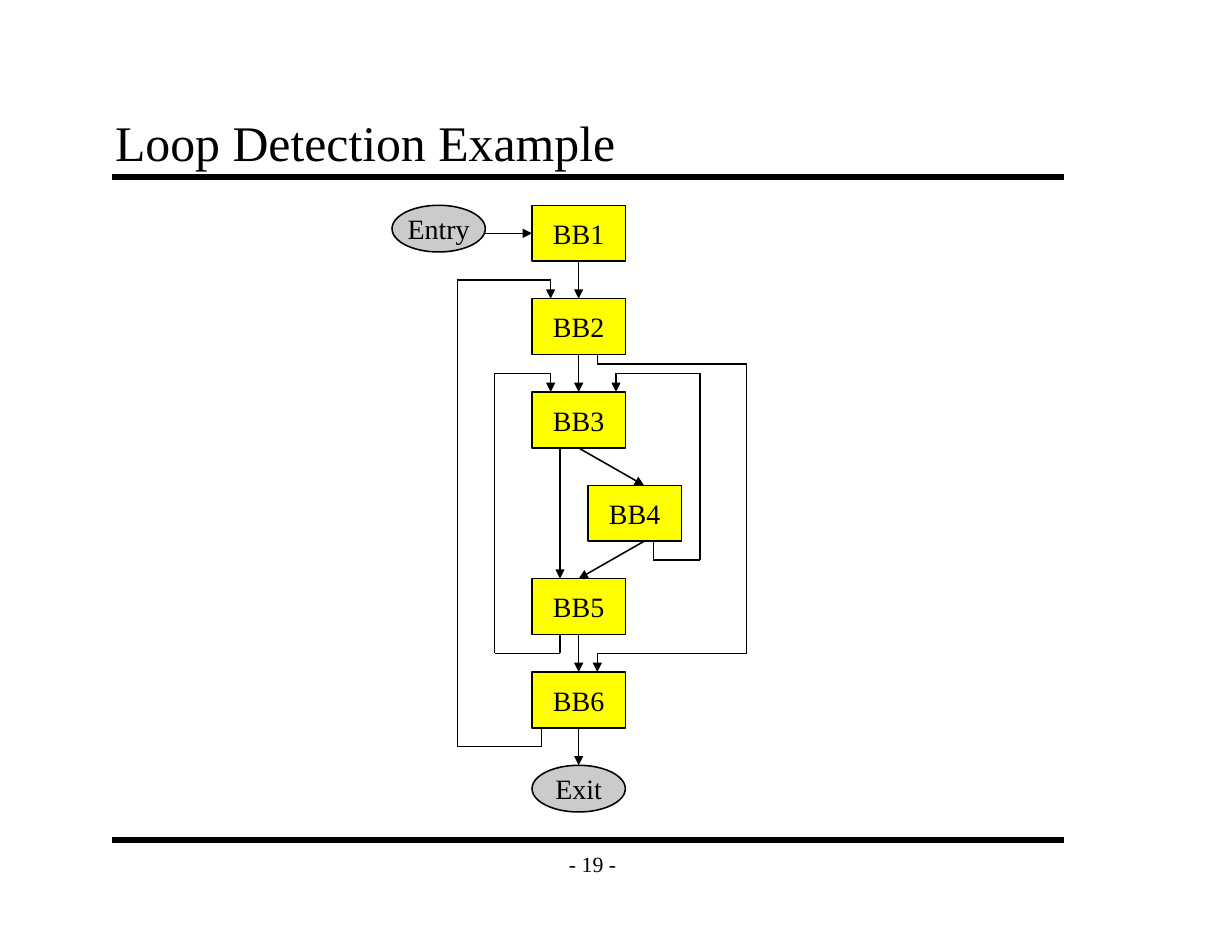
from itertools import pairwise

from lxml import etree
from pptx import Presentation
from pptx.dml.color import RGBColor
from pptx.enum import shapes, text
from pptx.oxml.ns import qn
from pptx.util import Pt

FONT = "Times New Roman"
BLACK, YELLOW, GRAY = "000000", "FFFF00", "CBCBCB"
TOP, BOTTOM, LEFT = 0, 2, 1  # connection sites
COLUMN, FIRST_ROW, PITCH = 342, 132, 60
BLOCK_WIDTH, BLOCK_HEIGHT, OVAL_HEIGHT = 60, 36, 30
MIDDLE = COLUMN + BLOCK_WIDTH / 2


def color(value):
    return RGBColor.from_string(value)


def write(box, content, *, size, align=text.PP_ALIGN.CENTER,
          anchor=text.MSO_ANCHOR.MIDDLE, wrap=False):
    frame = box.text_frame
    frame.word_wrap = wrap
    frame.vertical_anchor = anchor
    frame.margin_left = frame.margin_right = Pt(8)
    frame.margin_top = frame.margin_bottom = Pt(4)
    para = frame.paragraphs[0]
    para.alignment = align
    span = para.add_run()
    span.text = content
    span.font.name = FONT
    span.font.size = Pt(size)
    span.font.color.rgb = color(BLACK)


def add_label(page, content, left, top, width, height, **style):
    box = page.shapes.add_textbox(Pt(left), Pt(top), Pt(width), Pt(height))
    write(box, content, **style)


def add_node(page, content, left, top, height, kind, fill):
    box = page.shapes.add_shape(kind, Pt(left), Pt(top), Pt(BLOCK_WIDTH), Pt(height))
    box.shadow.inherit = False
    box.fill.solid()
    box.fill.fore_color.rgb = color(fill)
    box.line.color.rgb = color(BLACK)
    box.line.width = Pt(1)
    write(box, content, size=18)
    return box


def add_line(page, start, end, width=1, arrow=False):
    line = page.shapes.add_connector(
        shapes.MSO_CONNECTOR.STRAIGHT, *(Pt(value) for value in (*start, *end)))
    line.line.color.rgb = color(BLACK)
    line.line.width = Pt(width)
    if arrow:
        etree.SubElement(line.line._get_or_add_ln(), qn("a:tailEnd"),
                         type="triangle", w="med", len="med")
    etree.SubElement(line._element.spPr, qn("a:effectLst"))
    return line


def add_route(page, points):
    """Draw a bent path whose last segment carries the arrowhead."""
    for start, end in pairwise(points):
        add_line(page, start, end, arrow=end == points[-1])


def main():
    deck = Presentation()
    deck.slide_width, deck.slide_height = Pt(792), Pt(612)
    page = deck.slides.add_slide(deck.slide_layouts[6])

    # Title, rules and page number
    for y in (114, 540):
        add_line(page, (72, y), (684, y), width=4)
    add_label(page, "- 19 -", 354, 540, 54, 30, size=14)
    add_label(page, "Loop Detection Example", 66, 66, 612, 48, size=32,
              align=text.PP_ALIGN.LEFT, anchor=text.MSO_ANCHOR.BOTTOM, wrap=True)

    # Basic blocks, with BB4 set to the right
    tops = {n: FIRST_ROW + (n - 1) * PITCH for n in range(1, 7)}
    bottoms = {n: top + BLOCK_HEIGHT for n, top in tops.items()}
    blocks = {
        n: add_node(page, f"BB{n}", COLUMN + (36 if n == 4 else 0), top,
                    BLOCK_HEIGHT, shapes.MSO_SHAPE.RECTANGLE, YELLOW)
        for n, top in tops.items()
    }
    exit_top = FIRST_ROW + 6 * PITCH
    add_node(page, "Entry", 252, FIRST_ROW, OVAL_HEIGHT, shapes.MSO_SHAPE.OVAL, GRAY)
    exit_node = add_node(page, "Exit", COLUMN, exit_top, OVAL_HEIGHT,
                         shapes.MSO_SHAPE.OVAL, GRAY)

    # Straight flow down the column
    for upper, lower in ((blocks[1], blocks[2]), (blocks[2], blocks[3]),
                         (blocks[5], blocks[6]), (blocks[6], exit_node)):
        line = add_line(page, (MIDDLE, 0), (MIDDLE, 1), arrow=True)
        line.begin_connect(upper, BOTTOM)
        line.end_connect(lower, TOP)

    # Entry edge and the branch through BB4
    line = add_line(page, (312, 150), (COLUMN, 150), arrow=True)
    line.end_connect(blocks[1], LEFT)
    line = add_line(page, (MIDDLE, bottoms[3]), (414, tops[4]), arrow=True)
    line.begin_connect(blocks[3], BOTTOM)
    line = add_line(page, (414, bottoms[4]), (MIDDLE, tops[5]), arrow=True)
    line.end_connect(blocks[5], TOP)
    add_line(page, (360, bottoms[3]), (360, tops[5]), arrow=True)

    # Bent edges: source, target, exit x, lane x, entry x, drop below the source
    for source, target, out_x, lane, in_x, drop in (
        (5, 3, 360, 318, 354, 12),
        (2, 6, 384, 480, 384, 6),
        (4, 3, 420, 450, 396, 12),
        (6, 2, 348, 294, 354, 12),
    ):
        low, high = bottoms[source] + drop, tops[target] - 12
        add_route(page, [(out_x, bottoms[source]), (out_x, low), (lane, low),
                         (lane, high), (in_x, high), (in_x, tops[target])])

    deck.save("out.pptx")


if __name__ == "__main__":
    main()
